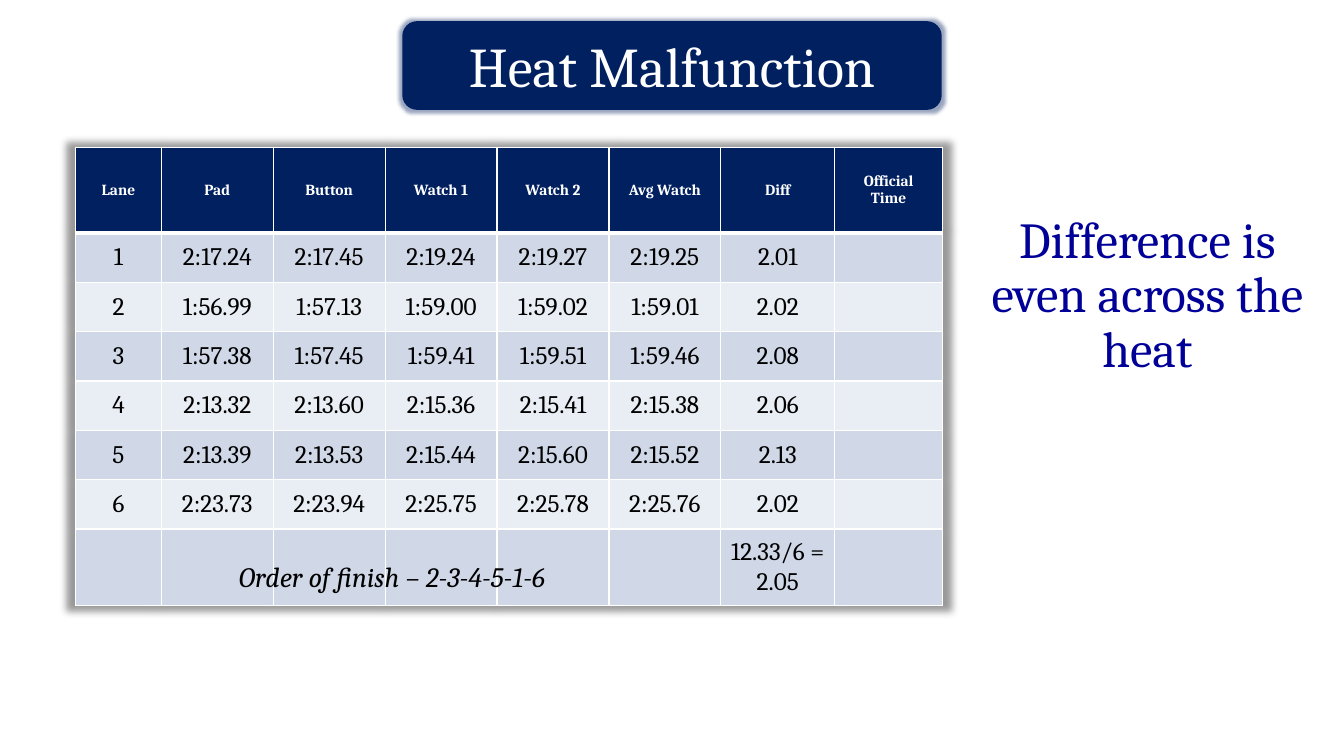
from lxml import etree
from pptx import Presentation
from pptx.dml.color import RGBColor
from pptx.enum.shapes import MSO_SHAPE as Shape
from pptx.enum.text import MSO_ANCHOR as Anchor, PP_ALIGN as Align
from pptx.oxml import parse_xml
from pptx.oxml.ns import nsdecls, qn
from pptx.util import Inches, Pt

NAVY = RGBColor(0x00, 0x20, 0x60)
BLUE = RGBColor(0x00, 0x00, 0x99)
BLACK = RGBColor(0x00, 0x00, 0x00)
WHITE = RGBColor(0xFF, 0xFF, 0xFF)
BAND_DARK = RGBColor(0xD0, 0xD8, 0xE8)
BAND_LIGHT = RGBColor(0xE9, 0xED, 0xF4)
FONT = "Cambria"

COLUMN_WIDTHS = [0.85, 1.11, 1.11, 1.11, 1.11, 1.11, 1.13, 1.07]
ROW_HEIGHTS = [0.85] + [0.49] * 6 + [0.76]
ROWS = [
    ["Lane", "Pad", "Button", "Watch 1", "Watch 2", "Avg Watch", "Diff", "Official Time"],
    ["1", "2:17.24", "2:17.45", "2:19.24", "2:19.27", "2:19.25", "2.01", ""],
    ["2", "1:56.99", "1:57.13", "1:59.00", "1:59.02", "1:59.01", "2.02", ""],
    ["3", "1:57.38", "1:57.45", "1:59.41", "1:59.51", "1:59.46", "2.08", ""],
    ["4", "2:13.32", "2:13.60", "2:15.36", "2:15.41", "2:15.38", "2.06", ""],
    ["5", "2:13.39", "2:13.53", "2:15.44", "2:15.60", "2:15.52", "2.13", ""],
    ["6", "2:23.73", "2:23.94", "2:25.75", "2:25.78", "2:25.76", "2.02", ""],
    ["", "", "", "", "", "", "12.33/6 = 2.05", ""],
]


def write_text(frame, text, size, color, bold=False, italic=False,
               align=Align.CENTER, line_spacing=None):
    """Write one formatted paragraph into a text frame."""
    frame.word_wrap = True
    paragraph = frame.paragraphs[0]
    paragraph.alignment = align
    paragraph.line_spacing = line_spacing
    paragraph.font.size = Pt(size)
    if text:
        run = paragraph.add_run()
        run.text = text
        font = run.font
        font.name, font.size, font.color.rgb = FONT, Pt(size), color
        font.bold, font.italic = bold, italic


def add_effect(effects, kind, color, alpha, **attributes):
    """Append a glow or shadow to an effect list."""
    effect = etree.SubElement(effects, qn(f"a:{kind}"))
    for name, value in attributes.items():
        effect.set(name, str(value))
    tint = etree.SubElement(effect, qn("a:srgbClr"), val=str(color))
    etree.SubElement(tint, qn("a:alpha"), val=str(alpha * 1000))


def set_borders(cell, **widths):
    """Give a cell white borders with the given widths in points."""
    properties = cell._tc.get_or_add_tcPr()
    for index, (side, width) in enumerate(widths.items()):
        properties.insert(index, parse_xml(
            f'<a:{side} {nsdecls("a")} w="{Pt(width)}"><a:solidFill>'
            f'<a:srgbClr val="{WHITE}"/></a:solidFill></a:{side}>'))


def add_title(slide, left, top, width, height):
    """Add the glowing rounded title banner."""
    shape = slide.shapes.add_shape(Shape.ROUNDED_RECTANGLE, Inches(left), Inches(top),
                                   Inches(width), Inches(height))
    shape.fill.solid()
    shape.fill.fore_color.rgb = NAVY
    shape.line.fill.background()
    shape.shadow.inherit = False
    effects = shape._element.spPr.find(qn("a:effectLst"))
    add_effect(effects, "glow", NAVY, 40, rad=Pt(5))
    shape.text_frame.vertical_anchor = Anchor.MIDDLE
    write_text(shape.text_frame, "Heat Malfunction", 40, WHITE)


def add_times_table(slide, left, top, width, height):
    """Add the lane times table with banded rows and a soft shadow."""
    frame = slide.shapes.add_table(len(ROWS), len(COLUMN_WIDTHS), Inches(left),
                                   Inches(top), Inches(width), Inches(height))
    table = frame.table
    effects = etree.Element(qn("a:effectLst"))
    add_effect(effects, "outerShdw", BLACK, 40, blurRad=Pt(5), sx=102000, sy=102000,
               algn="ctr", rotWithShape=0)
    table._tbl.tblPr.insert(0, effects)
    for column, column_width in zip(table.columns, COLUMN_WIDTHS):
        column.width = Inches(column_width)
    for row_index, (row, values) in enumerate(zip(table.rows, ROWS)):
        row.height = Inches(ROW_HEIGHTS[row_index])
        header = row_index == 0
        band = BAND_DARK if row_index % 2 else BAND_LIGHT
        for cell, value in zip(row.cells, values):
            cell.vertical_anchor = Anchor.MIDDLE
            cell.fill.solid()
            cell.fill.fore_color.rgb = NAVY if header else band
            set_borders(cell, lnL=1, lnR=1, lnT=3 if row_index == 1 else 1,
                        lnB=3 if header else 1)
            write_text(cell.text_frame, value, 11 if header else 18,
                       WHITE if header else BLACK, bold=header)


def add_label(slide, text, left, top, width, height, **text_format):
    """Add a text box with one formatted paragraph."""
    box = slide.shapes.add_textbox(Inches(left), Inches(top), Inches(width), Inches(height))
    write_text(box.text_frame, text, **text_format)


def main():
    """Build and save the slide."""
    presentation = Presentation()
    presentation.slide_width = Inches(13.33)
    presentation.slide_height = Inches(7.5)
    slide = presentation.slides.add_slide(presentation.slide_layouts[6])
    add_times_table(slide, 0.75, 1.46, 8.59, 4.59)
    add_label(slide, "Order of finish – 2-3-4-5-1-6", 2.27, 5.5, 4.15, 0.38,
              size=20, color=BLACK, italic=True, align=Align.LEFT)
    add_label(slide, "Difference is even across the heat", 9.52, 2.08, 3.72, 1.85,
              size=36, color=BLUE, line_spacing=0.9)
    add_title(slide, 3.99, 0.21, 5.35, 0.88)
    presentation.save("out.pptx")


if __name__ == "__main__":
    main()
